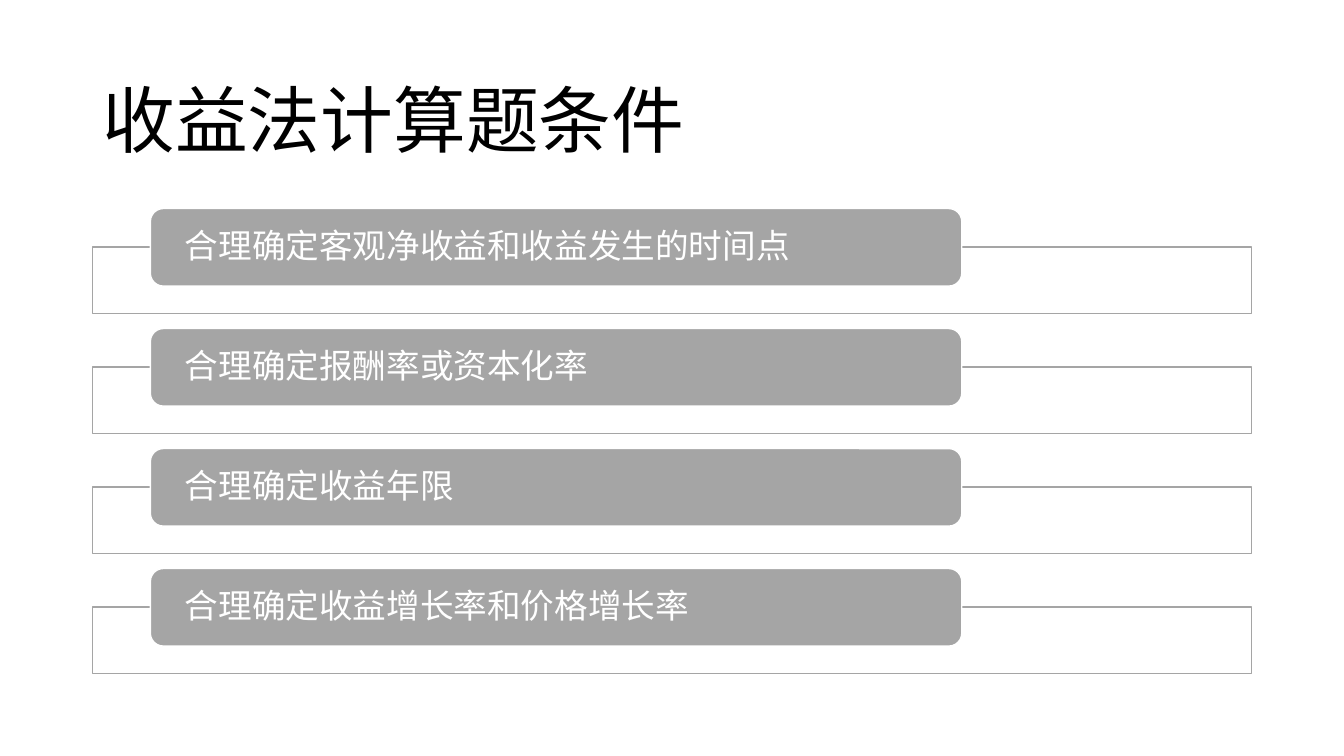
from dataclasses import dataclass

from lxml.etree import SubElement
from pptx import Presentation
from pptx.dml.color import RGBColor
from pptx.enum.shapes import MSO_SHAPE
from pptx.enum.text import MSO_ANCHOR, MSO_AUTO_SIZE, PP_ALIGN
from pptx.oxml.ns import qn
from pptx.shapes.autoshape import Shape
from pptx.slide import Slide
from pptx.text.text import TextFrame
from pptx.util import Pt

FONT = "Noto Sans CJK SC"
BLACK, WHITE, GRAY = "000000", "FFFFFF", "A5A5A5"
TITLE = "收益法计算题条件"
CONDITIONS = [
    "合理确定客观净收益和收益发生的时间点",
    "合理确定报酬率或资本化率",
    "合理确定收益年限",
    "合理确定收益增长率和价格增长率",
]
FIRST_FRAME_TOP = 176.4
ROW_PITCH = 85.71
LABEL_RISE = 27.4


@dataclass(frozen=True)
class BoxStyle:
    preset: MSO_SHAPE
    left: float
    width: float
    height: float
    fill: str
    line: str


FRAME = BoxStyle(MSO_SHAPE.RECTANGLE, 66, 828, 47.6, WHITE, GRAY)
LABEL = BoxStyle(MSO_SHAPE.ROUNDED_RECTANGLE, 107.4, 579.6, 55.4, GRAY, WHITE)


def rgb(color: str) -> RGBColor:
    return RGBColor.from_string(color)


def add_box(page: Slide, style: BoxStyle, top: float) -> Shape:
    box = page.shapes.add_shape(
        style.preset, Pt(style.left), Pt(top), Pt(style.width), Pt(style.height)
    )
    box.shadow.inherit = False
    box.fill.solid()
    box.fill.fore_color.rgb = rgb(style.fill)
    box.line.color.rgb = rgb(style.line)
    box.line.width = Pt(1)
    return box


def write_line(frame: TextFrame, text: str, size: float, color: str) -> None:
    """Fill the frame with one left-aligned, vertically centred line."""
    frame.text = text
    frame.word_wrap = True
    frame.auto_size = MSO_AUTO_SIZE.NONE
    frame.vertical_anchor = MSO_ANCHOR.MIDDLE
    para = frame.paragraphs[0]
    para.alignment = PP_ALIGN.LEFT
    para.line_spacing = 0.9
    span = para.runs[0]
    span.font.size = Pt(size)
    span.font.name = FONT
    span.font.color.rgb = rgb(color)
    SubElement(span.font._element, qn("a:ea"), typeface=FONT)


def add_title(page: Slide) -> None:
    title = page.shapes.title
    title.left, title.top = Pt(66), Pt(44)
    title.width, title.height = Pt(828), Pt(89.3)
    write_line(title.text_frame, TITLE, 52, BLACK)


def add_condition(page: Slide, text: str, frame_top: float) -> None:
    add_box(page, FRAME, frame_top)
    label = add_box(page, LABEL, frame_top - LABEL_RISE)
    text_frame = label.text_frame
    text_frame.margin_left = text_frame.margin_right = Pt(22)
    text_frame.margin_top = text_frame.margin_bottom = Pt(0)
    write_line(text_frame, text, 24, WHITE)


def main() -> None:
    deck = Presentation()
    deck.slide_width, deck.slide_height = Pt(960), Pt(540)
    page = deck.slides.add_slide(deck.slide_layouts.get_by_name("Title Only"))
    add_title(page)
    for row, text in enumerate(CONDITIONS):
        add_condition(page, text, FIRST_FRAME_TOP + row * ROW_PITCH)
    deck.save("out.pptx")


if __name__ == "__main__":
    main()
